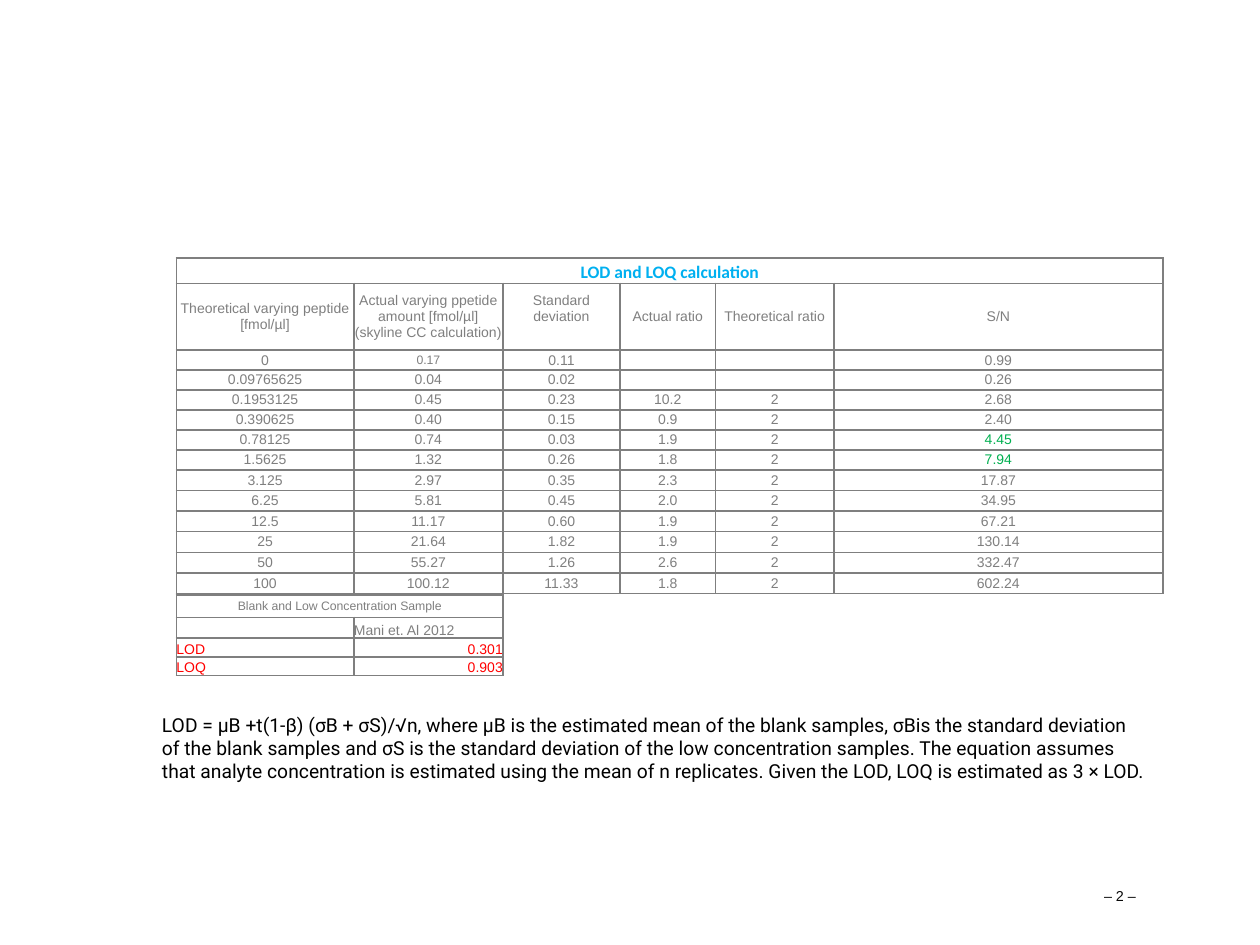
from lxml import etree
from pptx import Presentation
from pptx.dml.color import RGBColor
from pptx.enum.text import MSO_ANCHOR, PP_ALIGN
from pptx.oxml.ns import qn
from pptx.util import Pt

LEFT, CENTER, RIGHT = PP_ALIGN.LEFT, PP_ALIGN.CENTER, PP_ALIGN.RIGHT
MIDDLE, BOTTOM = MSO_ANCHOR.MIDDLE, MSO_ANCHOR.BOTTOM
GRAY, GREEN, RED, BLUE = "7F7F7F", "00B050", "FF0000", "00B0F0"
TABLE_LEFT = 100.8
COLUMN_WIDTHS = [101.4, 85.2, 67, 54.5, 67.7, 188]


def write_text(paragraph, text, size=8, font="Arial", color=GRAY, bold=False, align=CENTER):
    paragraph.alignment = align
    if not text:
        etree.SubElement(paragraph._p, qn("a:endParaRPr"), sz=str(size * 100))
        return
    paragraph.text = text
    for run in paragraph.runs:
        run.font.size = Pt(size)
        run.font.name = font
        run.font.bold = bold
        run.font.color.rgb = RGBColor.from_string(color)


def add_grid(slide, top, widths, heights):
    """Add a table with gray borders, no fill and no cell margins."""
    table = slide.shapes.add_table(len(heights), len(widths), Pt(TABLE_LEFT), Pt(top),
                                   Pt(sum(widths)), Pt(sum(heights))).table
    table.first_row = table.horz_banding = False
    for column, width in zip(table.columns, widths):
        column.width = Pt(width)
    for row, height in zip(table.rows, heights):
        row.height = Pt(height)
    for cell in table.iter_cells():
        cell.margin_left = cell.margin_right = cell.margin_top = cell.margin_bottom = 0
        cell.vertical_anchor = MIDDLE
        properties = cell._tc.get_or_add_tcPr()
        for side in ("a:lnL", "a:lnR", "a:lnT", "a:lnB"):
            line = etree.SubElement(properties, qn(side), w=str(Pt(1)))
            fill = etree.SubElement(line, qn("a:solidFill"))
            etree.SubElement(fill, qn("a:srgbClr"), val=GRAY)
        cell.fill.background()
    table.cell(0, 0).merge(table.cell(0, len(widths) - 1))
    return table


presentation = Presentation()
presentation.slide_width, presentation.slide_height = Pt(720), Pt(540)
slide = presentation.slides.add_slide(presentation.slide_layouts[6])

# Calibration table
headers = ["Theoretical varying peptide [fmol/µl]",
           "Actual varying ppetide amount [fmol/µl]\n(skyline CC calculation)",
           "Standard deviation", "Actual ratio", "Theoretical ratio", "S/N"]
measurements = [
    ["0", "0.17", "0.11", "", "", "0.99"],
    ["0.09765625", "0.04", "0.02", "", "", "0.26"],
    ["0.1953125", "0.45", "0.23", "10.2", "2", "2.68"],
    ["0.390625", "0.40", "0.15", "0.9", "2", "2.40"],
    ["0.78125", "0.74", "0.03", "1.9", "2", "4.45"],
    ["1.5625", "1.32", "0.26", "1.8", "2", "7.94"],
    ["3.125", "2.97", "0.35", "2.3", "2", "17.87"],
    ["6.25", "5.81", "0.45", "2.0", "2", "34.95"],
    ["12.5", "11.17", "0.60", "1.9", "2", "67.21"],
    ["25", "21.64", "1.82", "1.9", "2", "130.14"],
    ["50", "55.27", "1.26", "2.6", "2", "332.47"],
    ["100", "100.12", "11.33", "1.8", "2", "602.24"],
]
row_heights = [14.5, 38.2] + [11.4] * 6 + [11.8] * 6
calibration = add_grid(slide, 147.4, COLUMN_WIDTHS, row_heights)
title_cell = calibration.cell(0, 0)
title_cell.vertical_anchor = BOTTOM
write_text(title_cell.text_frame.paragraphs[0], "LOD and LOQ calculation",
           size=10, font="Calibri", color=BLUE, bold=True)
for row_index, values in enumerate([headers] + measurements, start=1):
    for column_index, value in enumerate(values):
        write_text(calibration.cell(row_index, column_index).text_frame.paragraphs[0], value,
                   size=7 if value == "0.17" else 8,
                   color=GREEN if value in ("4.45", "7.94") else GRAY)
calibration.cell(1, 2).margin_bottom = Pt(9)

# Detection limits
limits = add_grid(slide, 340, COLUMN_WIDTHS[:2], [12.8, 11.8, 10.9, 10.5])
write_text(limits.cell(0, 0).text_frame.paragraphs[0],
           "Blank and Low Concentration Sample", size=7)
limit_rows = [("", "Mani et. Al 2012", GRAY, LEFT),
              ("LOD", "0.301", RED, RIGHT),
              ("LOQ", "0.903", RED, RIGHT)]
for row_index, (label, value, color, value_align) in enumerate(limit_rows, start=1):
    for column_index, (text, align) in enumerate([(label, LEFT), (value, value_align)]):
        cell = limits.cell(row_index, column_index)
        cell.vertical_anchor = BOTTOM
        write_text(cell.text_frame.paragraphs[0], text, color=color, align=align)

# Explanation
explanation = slide.shapes.add_textbox(Pt(85.5), Pt(404), Pt(579), Pt(47.5))
explanation.text_frame.word_wrap = True
write_text(explanation.text_frame.paragraphs[0],
           "LOD = μB +t(1-β) (σB + σS)/√n, where μB is the estimated mean of the blank "
           "samples, σBis the standard deviation of the blank samples and σS is the standard "
           "deviation of the low concentration samples. The equation assumes that analyte "
           "concentration is estimated using the mean of n replicates. Given the LOD, LOQ is "
           "estimated as 3 × LOD.",
           size=11, font="Roboto", color="000000", align=LEFT)

# Page number
page_number = slide.shapes.add_textbox(Pt(470), Pt(497.5), Pt(179), Pt(29))
page_number.text_frame.margin_left = page_number.text_frame.margin_right = 0
page_number.text_frame.vertical_anchor = MIDDLE
page_number.text_frame.word_wrap = True
write_text(page_number.text_frame.paragraphs[0], "– 2 –", size=8.2, color="080808", align=RIGHT)

presentation.save("out.pptx")
